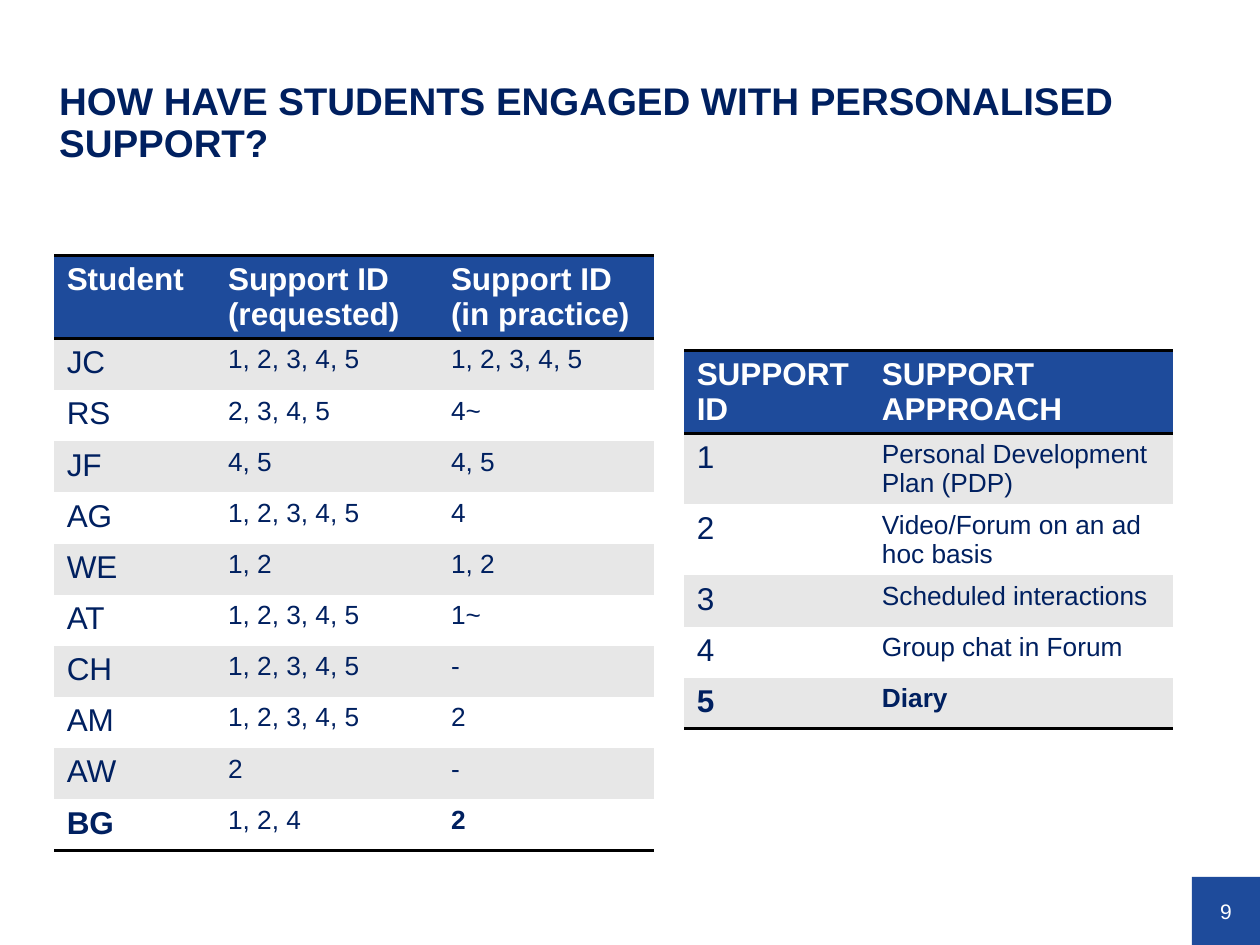
from dataclasses import dataclass

from lxml import etree
from pptx import Presentation
from pptx.dml.color import RGBColor
from pptx.enum.shapes import MSO_SHAPE
from pptx.enum.text import MSO_ANCHOR, MSO_AUTO_SIZE, PP_ALIGN
from pptx.oxml import parse_xml
from pptx.oxml.ns import nsdecls, qn
from pptx.util import Inches, Pt

RECTANGLE = MSO_SHAPE.RECTANGLE
MIDDLE = MSO_ANCHOR.MIDDLE
LEFT, CENTER = PP_ALIGN.LEFT, PP_ALIGN.CENTER
NO_AUTOFIT = MSO_AUTO_SIZE.NONE
TITLE_ONLY = 5
PLAIN_TABLE_STYLE = "{2D5ABB26-0587-4C30-8999-92F81FD0307C}"


@dataclass(frozen=True)
class Theme:
    font: str = "Arial"
    navy: str = "002060"
    blue: str = "1E4B9B"
    white: str = "FFFFFF"
    band: str = "E7E7E7"
    rule: str = "000000"
    title_size: int = 22
    label_size: int = 18
    detail_size: int = 15
    number_size: int = 12
    rule_width: int = 2


THEME = Theme()


def write_text(frame, text, size, color, bold=False, align=LEFT):
    para = frame.paragraphs[0]
    para.alignment = align
    span = para.add_run()
    span.text = text
    look = {"name": THEME.font, "size": Pt(size), "bold": bold}
    for name, value in look.items():
        setattr(span.font, name, value)
    span.font.color.rgb = RGBColor.from_string(color)
    return para


def add_rule(cell, side):
    """Draw a horizontal rule on the cell's top ("T") or bottom ("B"); call before filling."""
    line = parse_xml(
        f'<a:ln{side} {nsdecls("a")} w="{Pt(THEME.rule_width)}">'
        f'<a:solidFill><a:srgbClr val="{THEME.rule}"/></a:solidFill></a:ln{side}>'
    )
    cell._tc.get_or_add_tcPr().append(line)


deck = Presentation()
deck.slide_width, deck.slide_height = Inches(10), Inches(7.5)
page = deck.slides.add_slide(deck.slide_layouts[TITLE_ONLY])

# Page number
number_side = Inches(0.54)
number_box = page.shapes.add_shape(
    RECTANGLE, deck.slide_width - number_side, deck.slide_height - number_side,
    number_side, number_side)
number_box.shadow.inherit = False
number_box.fill.solid()
number_box.fill.fore_color.rgb = RGBColor.from_string(THEME.blue)
number_box.line.fill.background()
number_frame = number_box.text_frame
number_format = {"margin_left": 0, "margin_right": 0, "margin_top": 0,
                 "margin_bottom": 0, "vertical_anchor": MIDDLE}
for name, value in number_format.items():
    setattr(number_frame, name, value)
write_text(number_frame, "9", THEME.number_size, THEME.white, align=CENTER)

# Title
title = page.shapes.title
title_place = {"left": 0.43, "top": 0.83, "width": 9.04, "height": 0.29}
for name, value in title_place.items():
    setattr(title, name, Inches(value))
title_format = {"margin_left": Inches(0.04), "margin_right": 0,
                "margin_top": Inches(0.02), "margin_bottom": 0,
                "vertical_anchor": MIDDLE, "word_wrap": True,
                "auto_size": NO_AUTOFIT}
for name, value in title_format.items():
    setattr(title.text_frame, name, value)
title_para = write_text(
    title.text_frame, "HOW HAVE STUDENTS ENGAGED WITH PERSONALISED SUPPORT?",
    THEME.title_size, THEME.navy, bold=True)
title_para.line_spacing = 0.9

# Tables
header_height = 0.66
row_height = 4.06 / 10  # ten student rows share this height
two_line_height = 0.56

students = {
    "left": 0.43, "top": 2.03, "columns": [1.28, 1.77, 1.71],
    "heights": [header_height] + [row_height] * 10,
    "bold": {"BG": [0, 2]},
    "rows": [
        ("Student", "Support ID (requested)", "Support ID (in practice)"),
        ("JC", "1, 2, 3, 4, 5", "1, 2, 3, 4, 5"),
        ("RS", "2, 3, 4, 5", "4~"),
        ("JF", "4, 5", "4, 5"),
        ("AG", "1, 2, 3, 4, 5", "4"),
        ("WE", "1, 2", "1, 2"),
        ("AT", "1, 2, 3, 4, 5", "1~"),
        ("CH", "1, 2, 3, 4, 5", "-"),
        ("AM", "1, 2, 3, 4, 5", "2"),
        ("AW", "2", "-"),
        ("BG", "1, 2, 4", "2"),
    ],
}
approaches = {
    "left": 5.43, "top": 2.78, "columns": [1.47, 2.41],
    "heights": [header_height] + [two_line_height] * 2 + [row_height] * 3,
    "bold": {"5": [0, 1]},
    "rows": [
        ("SUPPORT ID", "SUPPORT APPROACH"),
        ("1", "Personal Development Plan (PDP)"),
        ("2", "Video/Forum on an ad hoc basis"),
        ("3", "Scheduled interactions"),
        ("4", "Group chat in Forum"),
        ("5", "Diary"),
    ],
}

for content in (students, approaches):
    rows, columns, heights = content["rows"], content["columns"], content["heights"]
    table = page.shapes.add_table(
        len(rows), len(columns), Inches(content["left"]), Inches(content["top"]),
        Inches(sum(columns)), Inches(sum(heights))).table
    table.horz_banding = False
    table._tbl.tblPr.find(qn("a:tableStyleId")).text = PLAIN_TABLE_STYLE
    for column, width in zip(table.columns, columns):
        column.width = Inches(width)
    for row_index, (row, height) in enumerate(zip(rows, heights)):
        table.rows[row_index].height = Inches(height)
        is_header = row_index == 0
        is_last = row_index == len(rows) - 1
        if is_header:
            fill, color = THEME.blue, THEME.white
        else:
            fill, color = (THEME.band if row_index % 2 else THEME.white), THEME.navy
        for column_index, text in enumerate(row):
            cell = table.cell(row_index, column_index)
            if is_header:
                add_rule(cell, "T")
            if is_header or is_last:
                add_rule(cell, "B")
            cell.fill.solid()
            cell.fill.fore_color.rgb = RGBColor.from_string(fill)
            is_label = is_header or column_index == 0
            size = THEME.label_size if is_label else THEME.detail_size
            bold = is_header or column_index in content["bold"].get(row[0], [])
            write_text(cell.text_frame, text, size, color, bold)

deck.save("out.pptx")
